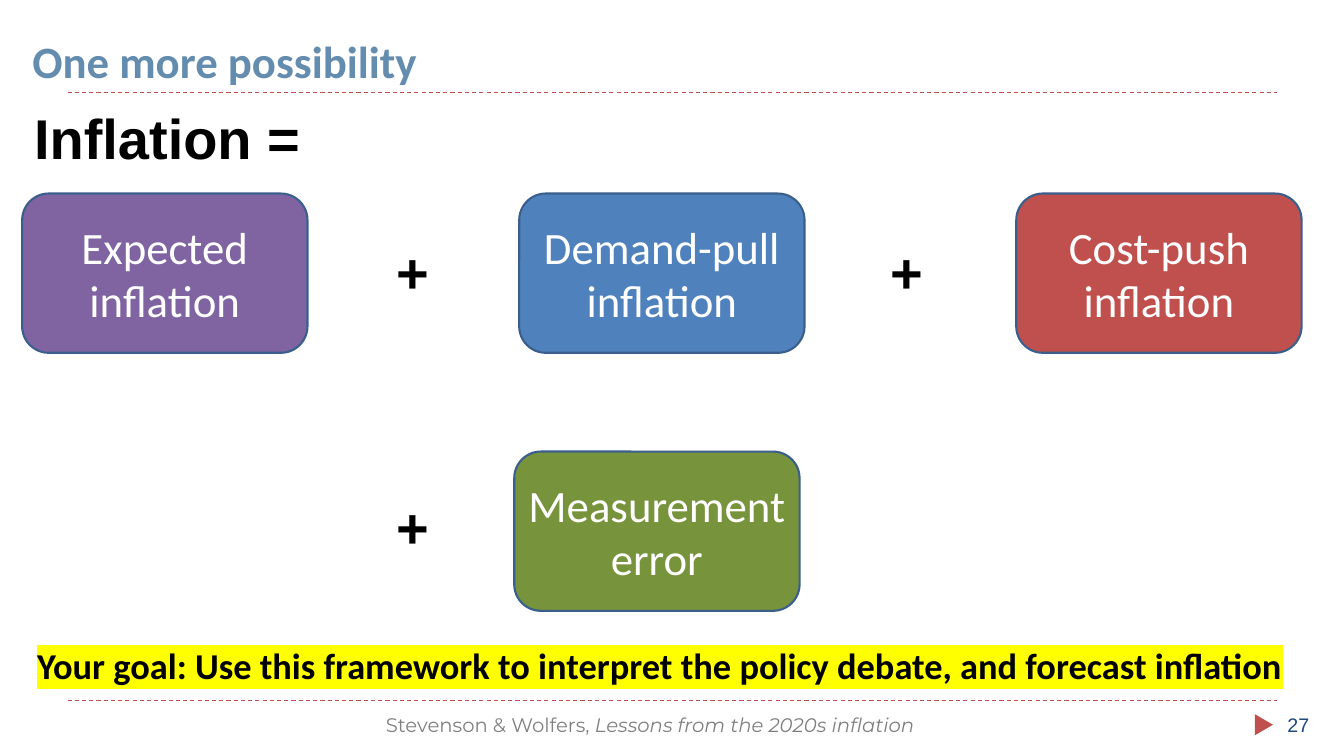
from lxml import etree
from pptx import Presentation
from pptx.dml.color import RGBColor
from pptx.enum.dml import MSO_LINE
from pptx.enum.shapes import MSO_CONNECTOR, MSO_SHAPE
from pptx.enum.text import MSO_ANCHOR, MSO_AUTO_SIZE, PP_ALIGN
from pptx.oxml.ns import qn
from pptx.util import Inches, Pt

# Content
TITLE = "One more possibility"
EQUATION = "Inflation ="
GOAL = "Your goal: Use this framework to interpret the policy debate, and forecast inflation"
SOURCE = [("Stevenson & Wolfers, ", False), ("Lessons from the 2020s inflation", True)]
PAGE = "27"
# text, fill, column, row, side inset
TERMS = [
    ("Expected inflation", "8064A2", 0, 0, 0.1),
    ("Demand-pull inflation", "4F81BD", 1, 0, 0.1),
    ("Cost-push inflation", "C0504D", 2, 0, 0.1),
    ("Measurement error", "77933C", 0.99, 1, 0),
]
PLUSES = [(0, 0), (1, 0), (0, 1)]  # gap after column, row

# Grid, in inches
LEFT, TOP, COL, ROW = 0.22, 1.92, 4.93, 2.56
BOX_W, BOX_H = 2.83, 1.58
PLUS_LEFT, PLUS_TOP, PLUS_W, PLUS_COL, PLUS_ROW = 3.42, 2.31, 1.34, 4.9, 2.53
RULES = [0.92, 6.95]

# Text formats
HEADING = dict(name="Calibri", size=32, bold=True, color="638CAE")
TERM = dict(name="Calibri", size=32, color="FFFFFF")
SIGN = dict(name="Arial", size=40, bold=True, color="000000")
CALL = dict(name="Calibri", size=26, bold=True, color="000000")
FOOT = dict(name="Montserrat", size=14, color="808080")
NUMBER = dict(name="Arial", size=14, color="1F497D")


def rgb(value):
    return RGBColor.from_string(value)


def add_run(p, text, fmt):
    r = p.add_run()
    r.text = text
    for key, value in fmt.items():
        if key == "color":
            r.font.color.rgb = rgb(value)
        else:
            setattr(r.font, key, Pt(value) if key == "size" else value)
    return r


def add_text(s, box, text, fmt, align=PP_ALIGN.LEFT, grow=True):
    tf = s.shapes.add_textbox(*map(Inches, box)).text_frame
    tf.word_wrap = True
    tf.auto_size = MSO_AUTO_SIZE.SHAPE_TO_FIT_TEXT if grow else MSO_AUTO_SIZE.NONE
    p = tf.paragraphs[0]
    p.alignment = align
    runs = [(text, None)] if isinstance(text, str) else text
    for words, italic in runs:
        r = add_run(p, words, dict(fmt, italic=italic))
    return r


def add_shape(s, kind, box, fill):
    sp = s.shapes.add_shape(kind, *map(Inches, box))
    sp.shadow.inherit = False
    sp.fill.solid()
    sp.fill.fore_color.rgb = rgb(fill)
    return sp


def highlight(r, color):
    mark = etree.Element(qn("a:highlight"))
    etree.SubElement(mark, qn("a:srgbClr")).set("val", color)
    r.font._element.find(qn("a:latin")).addprevious(mark)


def main():
    prs = Presentation()
    prs.slide_width, prs.slide_height = Inches(13.33), Inches(7.5)
    s = prs.slides.add_slide(prs.slide_layouts[5])

    # Dashed rules and page marker
    for y in RULES:
        line = s.shapes.add_connector(MSO_CONNECTOR.STRAIGHT, Inches(0.67), Inches(y),
                                      Inches(12.67), Inches(y))
        line.line.color.rgb = rgb("C0504D")
        line.line.width = Pt(0.75)
        line.line.dash_style = MSO_LINE.DASH
        etree.SubElement(line._element.spPr, qn("a:effectLst"))
    marker = add_shape(s, MSO_SHAPE.ISOSCELES_TRIANGLE, (12.43, 7.1, 0.21, 0.18), "C0504D")
    marker.rotation = 90
    marker.line.fill.background()

    # Title
    title = s.shapes.title
    title.left, title.top, title.width, title.height = map(Inches, (LEFT, 0.17, 12.89, 0.75))
    tf = title.text_frame
    tf.vertical_anchor = MSO_ANCHOR.BOTTOM
    tf.auto_size = MSO_AUTO_SIZE.NONE
    tf.paragraphs[0].alignment = PP_ALIGN.LEFT
    add_run(tf.paragraphs[0], TITLE, HEADING)

    # Footer
    add_text(s, (0.67, 7.02, 11.56, 0.4), SOURCE, FOOT, PP_ALIGN.CENTER, grow=False)
    add_text(s, (12.67, 7.02, 0.67, 0.4), PAGE, NUMBER, grow=False)

    # Terms of the equation
    for text, fill, col, row, inset in TERMS:
        box = (LEFT + col * COL, TOP + row * ROW, BOX_W, BOX_H)
        sp = add_shape(s, MSO_SHAPE.ROUNDED_RECTANGLE, box, fill)
        sp.line.color.rgb = rgb("3A5F8C")
        sp.line.width = Pt(1.5)
        tf = sp.text_frame
        tf.word_wrap = True
        tf.vertical_anchor = MSO_ANCHOR.MIDDLE
        tf.margin_left = tf.margin_right = Inches(inset)
        tf.paragraphs[0].alignment = PP_ALIGN.CENTER
        add_run(tf.paragraphs[0], text, TERM)

    # Equation start, plus signs and goal
    add_text(s, (0.24, 0.98, 12.68, 0.77), EQUATION, SIGN)
    for col, row in PLUSES:
        box = (PLUS_LEFT + col * PLUS_COL, PLUS_TOP + row * PLUS_ROW, PLUS_W, 0.77)
        add_text(s, box, "+", SIGN, PP_ALIGN.CENTER)
    highlight(add_text(s, (0.27, 6.33, 12.68, 0.54), GOAL, CALL), "FFFF00")

    prs.save("out.pptx")


if __name__ == "__main__":
    main()
